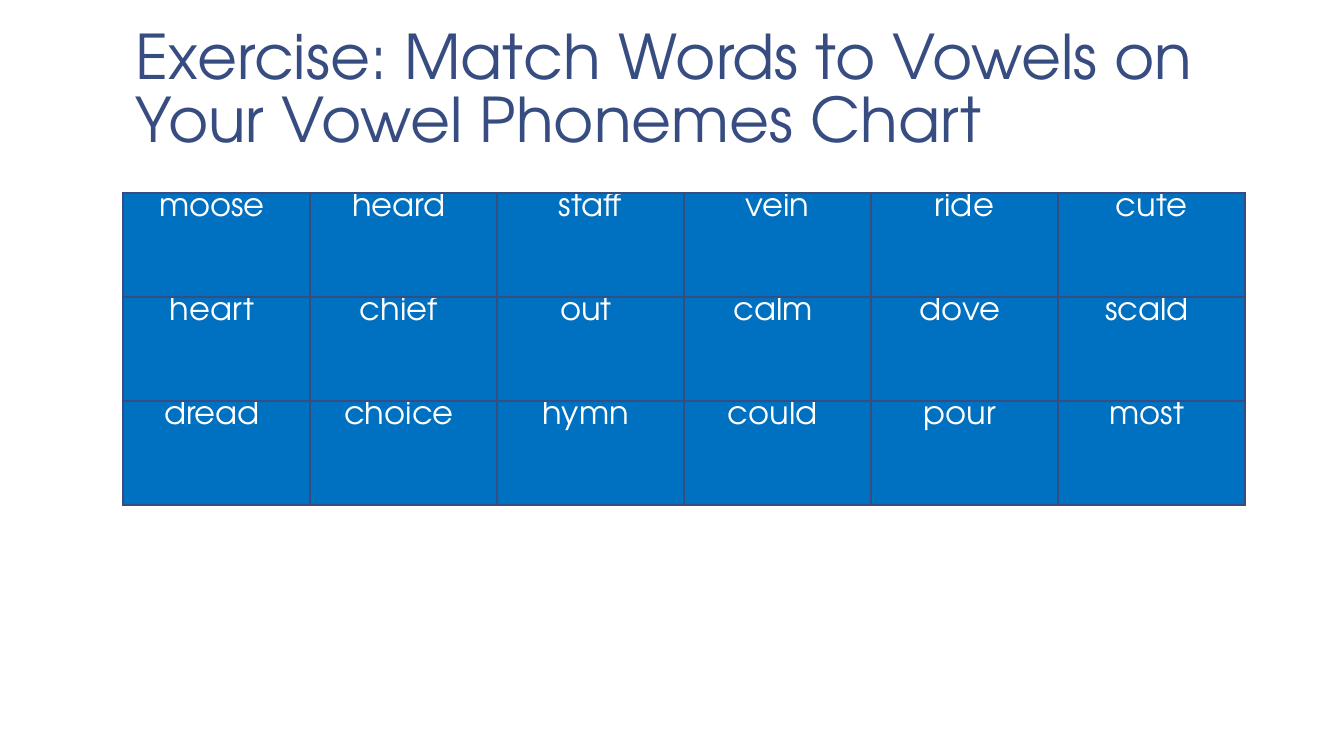
from pptx import Presentation, util as u
from pptx.dml.color import RGBColor
from pptx.enum import text as t
from pptx.oxml import parse_xml
from pptx.oxml.ns import nsdecls

SCALE = 914400 / 100.8  # EMU in one px
FONT = "TeX Gyre Adventor"
NAVY, BLUE, WHITE = "374C81", "0070C0", "FFFFFF"
TITLE = "Exercise: Match Words to Vowels on Your Vowel Phonemes Chart"
# Trailing spaces count in the centring of each word
WORDS = [
    ["moose ", "heard ", "staff", "vein", "ride", "cute"],
    ["heart ", "chief ", "out ", "calm ", "dove ", "scald "],
    ["dread ", "choice ", "hymn ", "could ", "pour ", "most "],
]


def px(n):
    return u.Emu(round(n * SCALE))


def color(code):
    return RGBColor.from_string(code)


def write(frame, words, size, ink, align=t.PP_ALIGN.LEFT, space=1.0):
    para = frame.paragraphs[0]
    para.alignment = align
    para.line_spacing = space
    run = para.add_run()
    run.text = words
    run.font.name = FONT
    run.font.size = u.Pt(size)
    run.font.color.rgb = color(ink)


def add_title(slide, x, y, w, h):
    frame = slide.shapes.add_textbox(px(x), px(y), px(w), px(h)).text_frame
    frame.word_wrap = True
    frame.vertical_anchor = t.MSO_ANCHOR.BOTTOM
    frame.margin_left = frame.margin_right = px(13)
    frame.margin_top = frame.margin_bottom = px(7)
    write(frame, TITLE, 44, NAVY, space=0.85)


def edge(cell, ink, width):
    props = cell._tc.get_or_add_tcPr()
    for i, side in enumerate(("lnL", "lnR", "lnT", "lnB")):
        props.insert(i, parse_xml(
            f'<a:{side} {nsdecls("a")} w="{u.Pt(width)}"><a:solidFill>'
            f'<a:srgbClr val="{ink}"/></a:solidFill></a:{side}>'))


def add_grid(slide, x, y, wide, high):
    rows, cols = len(WORDS), len(WORDS[0])
    grid = slide.shapes.add_table(
        rows, cols, px(x), px(y), px(wide * cols), px(high * rows)).table
    grid.first_row = grid.horz_banding = False
    for r, row in enumerate(WORDS):
        for c, word in enumerate(row):
            cell = grid.cell(r, c)
            cell.margin_top = cell.margin_bottom = 0
            cell.fill.solid()
            cell.fill.fore_color.rgb = color(BLUE)
            edge(cell, NAVY, 1)
            write(cell.text_frame, word, 23, WHITE, align=t.PP_ALIGN.CENTER)


def main():
    deck = Presentation()
    deck.slide_width, deck.slide_height = px(1344), px(756)
    slide = deck.slides.add_slide(deck.slide_layouts[6])
    # Heading
    add_title(slide, 123, 8, 1120, 154)
    # Word table
    add_grid(slide, 123, 193, 187, 104)
    deck.save("out.pptx")


if __name__ == "__main__":
    main()
